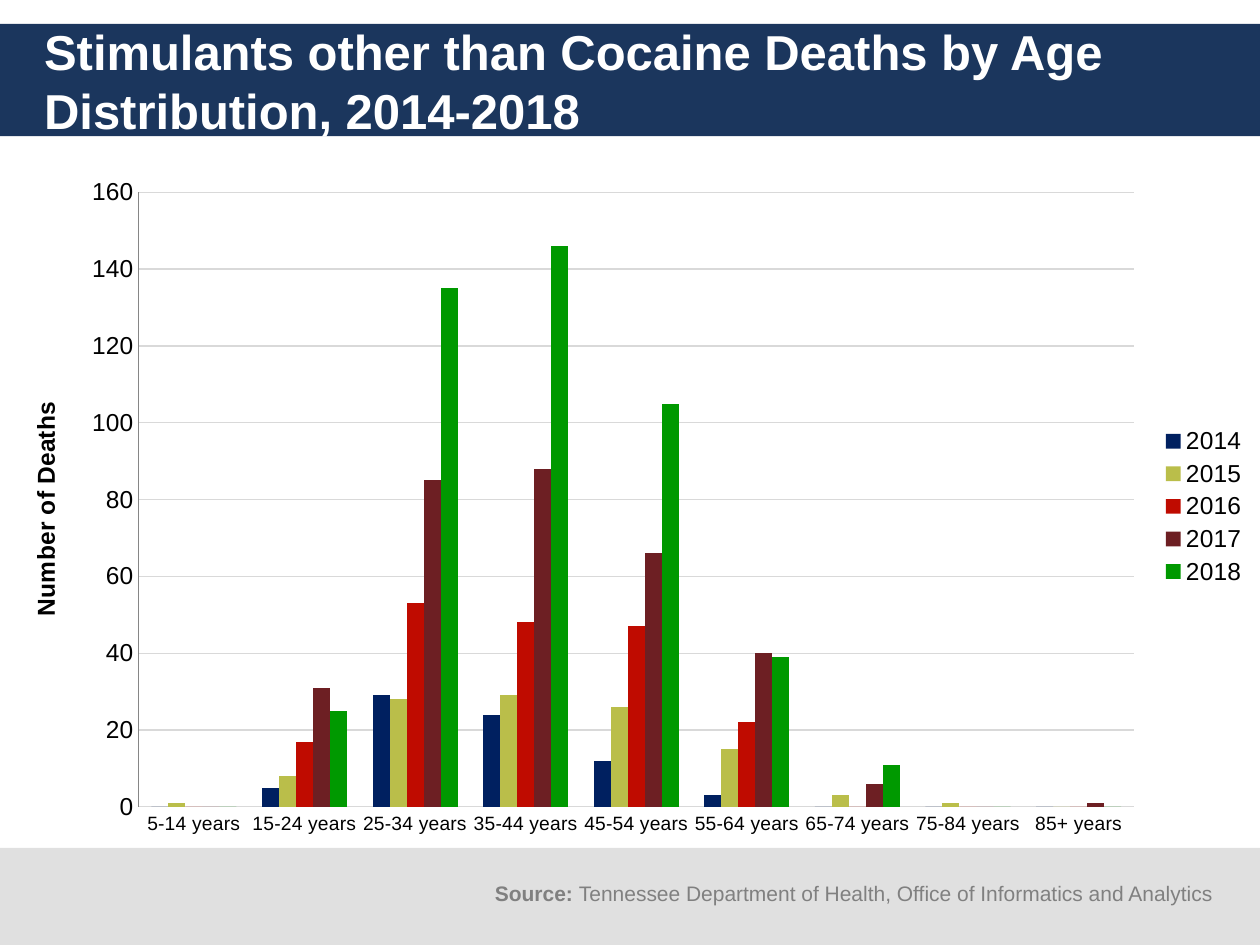
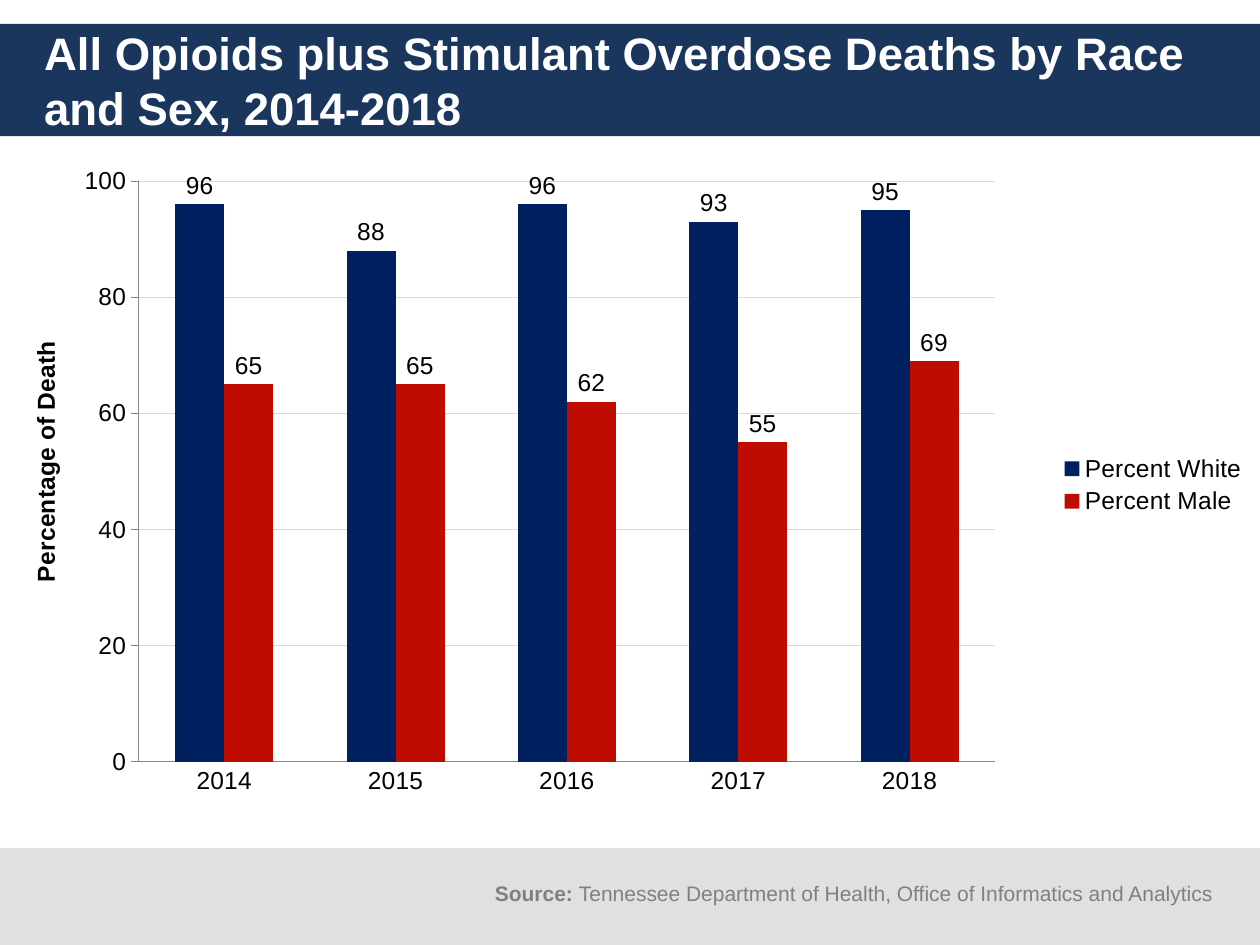
from lxml import etree
from pptx import Presentation
from pptx.chart.data import CategoryChartData
from pptx.dml.color import RGBColor
from pptx.enum.chart import XL_CHART_TYPE, XL_LABEL_POSITION, XL_LEGEND_POSITION, XL_TICK_MARK
from pptx.enum.shapes import MSO_SHAPE
from pptx.enum.text import MSO_ANCHOR, MSO_AUTO_SIZE, PP_ALIGN
from pptx.oxml.ns import qn
from pptx.util import Inches, Pt

CLUSTERED = XL_CHART_TYPE.COLUMN_CLUSTERED
OUTSIDE_END = XL_LABEL_POSITION.OUTSIDE_END
LEGEND_RIGHT = XL_LEGEND_POSITION.RIGHT
TICK_NONE, TICK_OUT = XL_TICK_MARK.NONE, XL_TICK_MARK.OUTSIDE
RECTANGLE = MSO_SHAPE.RECTANGLE
MIDDLE, TOP = MSO_ANCHOR.MIDDLE, MSO_ANCHOR.TOP
NO_AUTOFIT = MSO_AUTO_SIZE.NONE
LEFT = PP_ALIGN.LEFT

NAVY = RGBColor(0x1B, 0x36, 0x5D)
PALE_GRAY = RGBColor(0xE0, 0xE0, 0xE0)
TEXT_GRAY = RGBColor(0x80, 0x80, 0x80)
GRID_GRAY = RGBColor(0xD9, 0xD9, 0xD9)
AXIS_GRAY = RGBColor(0x86, 0x86, 0x86)
WHITE = RGBColor(0xFF, 0xFF, 0xFF)
BLACK = RGBColor(0x00, 0x00, 0x00)
BLUE = RGBColor(0x00, 0x20, 0x60)
OLIVE = RGBColor(0xBA, 0xBE, 0x4A)
RED = RGBColor(0xBF, 0x0B, 0x00)
MAROON = RGBColor(0x6D, 0x1F, 0x23)
GREEN = RGBColor(0x00, 0x99, 0x00)

FONT = "Arial"
WIDTH, HEIGHT = Inches(10), Inches(7.5)
HEADER_BOX = (0, 0.19, 10, 0.89)
FOOTER_BOX = (0, 6.73, 10, 0.77)
TITLE_INDENT = 0.25
SOURCE_INDENT, SOURCE_DROP = 3.83, 0.21
AXIS_TITLE_X = 0.02

AGE_CHART = {
    "title": "Stimulants other than Cocaine Deaths by Age Distribution, 2014-2018",
    "title_size": 28,
    "box": (0, 1.31, 10, 5.42),
    "plot": (0.11, 0.04, 0.79, 0.9),
    "categories": ["5-14 years", "15-24 years", "25-34 years", "35-44 years", "45-54 years",
                   "55-64 years", "65-74 years", "75-84 years", "85+ years"],
    "series": [
        ("2014", BLUE, (0, 5, 29, 24, 12, 3, 0, 0, 0)),
        ("2015", OLIVE, (1, 8, 28, 29, 26, 15, 3, 1, 0)),
        ("2016", RED, (0, 17, 53, 48, 47, 22, 0, 0, 0)),
        ("2017", MAROON, (0, 31, 85, 88, 66, 40, 6, 0, 1)),
        ("2018", GREEN, (0, 25, 135, 146, 105, 39, 11, 0, 0)),
    ],
    "axis_title": "Number of Deaths",
    "axis_title_y": 0.34,
    "maximum": 160,
    "category_size": 11,
    "category_line": GRID_GRAY,
    "value_tick": TICK_NONE,
    "labels": False,
}

RACE_SEX_CHART = {
    "title": "All Opioids plus Stimulant Overdose Deaths by Race and Sex, 2014-2018",
    "title_size": 26,
    "box": (0, 1.17, 10, 5.36),
    "plot": (0.11, 0.05, 0.68, 0.86),
    "categories": ["2014", "2015", "2016", "2017", "2018"],
    "series": [
        ("Percent White", BLUE, (96, 88, 96, 93, 95)),
        ("Percent Male", RED, (65, 65, 62, 55, 69)),
    ],
    "axis_title": "Percentage of Death",
    "axis_title_y": 0.28,
    "maximum": 100,
    "category_size": 14,
    "category_line": AXIS_GRAY,
    "value_tick": TICK_OUT,
    "labels": True,
}


def assign(target, **values):
    for attribute, value in values.items():
        setattr(target, attribute, value)


def style_font(font, size, color, bold=False):
    assign(font, name=FONT, size=Pt(size), bold=bold)
    font.color.rgb = color


def style_line(line, color):
    line.color.rgb = color
    line.width = Pt(0.75)


def add_band(slide, box, color):
    band = slide.shapes.add_shape(RECTANGLE, *map(Inches, box))
    band.shadow.inherit = False
    band.fill.solid()
    band.fill.fore_color.rgb = color
    band.line.fill.background()
    return band


def add_header(slide, box, text, size):
    left, top, width, height = map(Inches, box)
    band = add_band(slide, box, NAVY)
    title = slide.shapes.title
    title.element.addprevious(band.element)
    indent = Inches(TITLE_INDENT)
    assign(title, left=left + indent, top=top, width=width - indent, height=height)
    frame = title.text_frame
    frame.text = text
    assign(frame, word_wrap=True, auto_size=NO_AUTOFIT, vertical_anchor=MIDDLE)
    heading = frame.paragraphs[0]
    heading.alignment = LEFT
    style_font(heading.runs[0].font, size, WHITE, True)


def add_footer(slide, box):
    add_band(slide, box, PALE_GRAY)
    left, top, _, _ = box
    source = slide.shapes.add_textbox(
        Inches(left + SOURCE_INDENT), Inches(top + SOURCE_DROP), Inches(6), Inches(0.3))
    assign(source.text_frame, word_wrap=True, vertical_anchor=TOP)
    credit = source.text_frame.paragraphs[0]
    for text, bold in (
        ("Source: ", True),
        ("Tennessee Department of Health, Office of Informatics and Analytics", False),
    ):
        run = credit.add_run()
        run.text = text
        style_font(run.font, 12, TEXT_GRAY, bold)


def set_layout(parent, **settings):
    layout = parent.find(qn("c:layout"))
    if layout is None:
        layout = etree.Element(qn("c:layout"))
        parent.insert(0, layout)
    manual = etree.SubElement(layout, qn("c:manualLayout"))
    for tag, value in settings.items():
        etree.SubElement(manual, qn(f"c:{tag}")).set("val", str(value))


def style_axes(chart, content):
    category_axis, value_axis = chart.category_axis, chart.value_axis
    assign(category_axis, major_tick_mark=TICK_NONE, minor_tick_mark=TICK_NONE)
    assign(value_axis, major_tick_mark=content["value_tick"], minor_tick_mark=TICK_NONE,
           minimum_scale=0, maximum_scale=content["maximum"], major_unit=20,
           has_major_gridlines=True)
    for axis, size, color in (
        (category_axis, content["category_size"], content["category_line"]),
        (value_axis, 14, AXIS_GRAY),
    ):
        style_font(axis.tick_labels.font, size, BLACK)
        style_line(axis.format.line, color)
    style_line(value_axis.major_gridlines.format.line, GRID_GRAY)

    axis_title = value_axis.axis_title
    axis_title.text_frame.text = content["axis_title"]
    style_font(axis_title.text_frame.paragraphs[0].runs[0].font, 14, BLACK, True)
    axis_title.element.find(f".//{qn('a:bodyPr')}").set("rot", "-5400000")
    set_layout(axis_title.element, xMode="edge", yMode="edge",
               x=AXIS_TITLE_X, y=content["axis_title_y"])


def add_deaths_chart(slide, content):
    deaths = CategoryChartData()
    deaths.categories = content["categories"]
    for name, _, values in content["series"]:
        deaths.add_series(name, values)
    chart = slide.shapes.add_chart(CLUSTERED, *map(Inches, content["box"]), deaths).chart
    assign(chart, has_title=False, has_legend=True)
    style_font(chart.font, 14, BLACK)
    assign(chart.legend, position=LEGEND_RIGHT, include_in_layout=False)
    style_font(chart.legend.font, 14, BLACK)
    style_axes(chart, content)

    x, y, w, h = content["plot"]
    set_layout(chart.element.find(f".//{qn('c:plotArea')}"), layoutTarget="inner",
               xMode="edge", yMode="edge", x=x, y=y, w=w, h=h)

    columns = chart.plots[0]
    assign(columns, gap_width=150, overlap=0, vary_by_categories=False)
    for series, (_, color, _) in zip(columns.series, content["series"]):
        series.format.fill.solid()
        series.format.fill.fore_color.rgb = color
    if content["labels"]:
        columns.has_data_labels = True
        assign(columns.data_labels, show_value=True, position=OUTSIDE_END)
        style_font(columns.data_labels.font, 14, BLACK)


def add_chart_slide(deck, content):
    slide = deck.slides.add_slide(deck.slide_layouts.get_by_name("Title Only"))
    add_header(slide, HEADER_BOX, content["title"], content["title_size"])
    add_footer(slide, FOOTER_BOX)
    add_deaths_chart(slide, content)


def main():
    deck = Presentation()
    assign(deck, slide_width=WIDTH, slide_height=HEIGHT)
    for content in (AGE_CHART, RACE_SEX_CHART):
        add_chart_slide(deck, content)
    deck.save("out.pptx")


if __name__ == "__main__":
    main()
